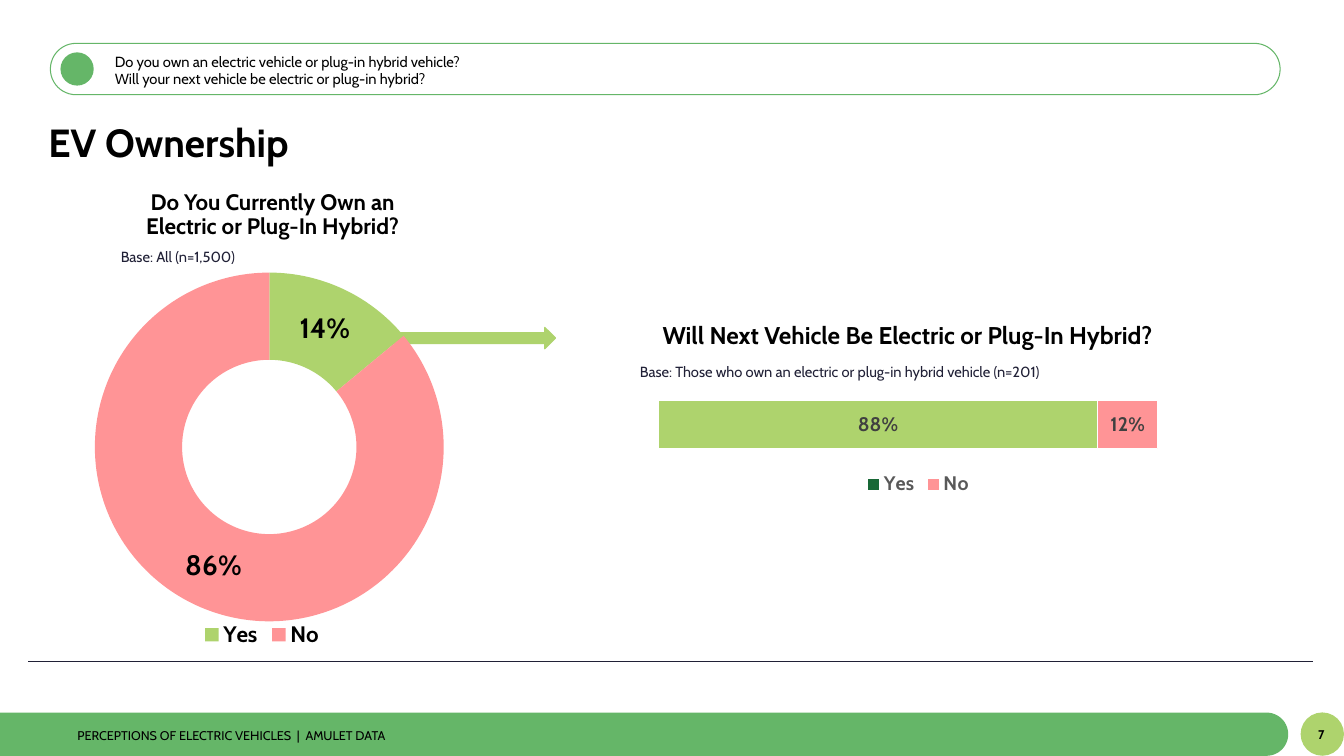
"""Build the EV ownership slide with a doughnut, a stacked bar and a footer band."""
from math import cos, pi, sin

from pptx import Presentation
from pptx.chart.data import CategoryChartData
from pptx.dml.color import RGBColor
from pptx.enum.chart import XL_CHART_TYPE as Chart, XL_LABEL_POSITION as LabelPos
from pptx.enum.chart import XL_LEGEND_POSITION as LegendPos
from pptx.enum.shapes import MSO_CONNECTOR as Connector, MSO_SHAPE as Shape
from pptx.enum.text import MSO_ANCHOR as Anchor, MSO_AUTO_SIZE as AutoSize, PP_ALIGN as Align
from pptx.oxml import parse_xml
from pptx.oxml.ns import nsdecls, qn
from pptx.oxml.xmlchemy import OxmlElement
from pptx.util import Inches, Pt

COLORS = {
    "band": "65B668", "yes": "AED36D", "no": "FF9496", "yes_key": "186836",
    "ink": "000000", "navy": "202036", "label": "404040", "key": "595959", "white": "FFFFFF",
}
FONT = "Cabin"
COLUMNS, ROWS = 80, 45


class SlideKit:
    """Draws styled elements on a grid of 80 columns by 45 rows."""

    def __init__(self, deck):
        self.slide = deck.slides.add_slide(deck.slide_layouts[1])
        self.shapes = self.slide.shapes
        self.cell = deck.slide_width / COLUMNS

    def span(self, *cells):
        return [round(self.cell * count) for count in cells]

    def color(self, name):
        return RGBColor.from_string(COLORS[name])

    def font(self, font, size, color="ink", bold=False):
        font.name, font.size, font.bold = FONT, Pt(size), bold
        font.color.rgb = self.color(color)

    def paint(self, part, fill=None, line=None, weight=1):
        if fill:
            part.fill.solid()
            part.fill.fore_color.rgb = self.color(fill)
        else:
            part.fill.background()
        if line:
            part.line.color.rgb = self.color(line)
            part.line.width = Pt(weight)
        else:
            part.line.fill.background()

    def shape(self, kind, box, **look):
        drawn = self.shapes.add_shape(kind, *self.span(*box))
        drawn.shadow.inherit = False
        self.paint(drawn, **look)
        return drawn

    def footer_band(self, top, right, color):
        radius = (ROWS - top) / 2
        steps = 32
        arc = [(right - radius + radius * sin(pi * i / steps),
                top + radius - radius * cos(pi * i / steps)) for i in range(steps + 1)]
        outline = self.shapes.build_freeform(*self.span(0, top))
        outline.add_line_segments([self.span(*point) for point in arc + [(0, ROWS)]])
        band = outline.convert_to_shape()
        band.shadow.inherit = False
        self.paint(band, color)

    def rule(self, left, right, row, color, weight):
        line = self.shapes.add_connector(Connector.STRAIGHT, *self.span(left, row, right, row))
        line.line.color.rgb = self.color(color)
        line.line.width = Pt(weight)
        line._element.spPr.append(OxmlElement("a:effectLst"))

    def text(self, box, lines, size, color="ink", bold=False, align=Align.LEFT,
             anchor=Anchor.TOP, spacing=0.9, holder=None):
        if holder is None:
            holder = self.shapes.add_textbox(*self.span(*box))
        else:
            holder.left, holder.top, holder.width, holder.height = self.span(*box)
        frame = holder.text_frame
        frame.word_wrap, frame.auto_size = True, AutoSize.NONE
        frame.vertical_anchor = anchor
        for index, words in enumerate(lines):
            paragraph = frame.add_paragraph() if index else frame.paragraphs[0]
            if holder.is_placeholder:
                properties = paragraph._p.get_or_add_pPr()
                properties.set("marL", "0")
                properties.set("indent", "0")
                properties.append(OxmlElement("a:buNone"))
            paragraph.alignment, paragraph.line_spacing = align, spacing
            paragraph.space_before = Pt(0)
            run = paragraph.add_run()
            run.text = words
            self.font(run.font, size, color, bold)

    def layout(self, x, y, w=None, h=None):
        sizes = f'<c:w val="{w}"/><c:h val="{h}"/>' if w else ""
        target = '<c:layoutTarget val="inner"/>' if w else ""
        return parse_xml(
            f'<c:layout {nsdecls("c")}><c:manualLayout>{target}<c:xMode val="edge"/>'
            f'<c:yMode val="edge"/><c:x val="{x}"/><c:y val="{y}"/>{sizes}'
            '</c:manualLayout></c:layout>')

    def chart(self, kind, box, categories, series, plot_at, legend_at, size, key_color):
        data = CategoryChartData(number_format="0%")
        data.categories = categories
        for name, values in series:
            data.add_series(name, values)
        chart = self.shapes.add_chart(kind, *self.span(*box), data).chart
        chart.has_title = False
        self.font(chart.font, size, bold=True)
        chart.has_legend = True
        chart.legend.position, chart.legend.include_in_layout = LegendPos.BOTTOM, False
        self.font(chart.legend.font, size, key_color, True)
        root = chart._chartSpace
        area, legend = root.chart.plotArea, chart.legend._element
        for parent in (area, legend):
            for old in parent.findall(qn("c:layout")):
                parent.remove(old)
        area.insert(0, self.layout(*plot_at))
        legend.find(qn("c:legendPos")).addnext(self.layout(*legend_at))
        root.chart.addnext(parse_xml(
            f'<c:spPr {nsdecls("c", "a")}><a:noFill/><a:ln><a:noFill/></a:ln></c:spPr>'))
        return chart

    def value_labels(self, labels, size, color):
        labels.show_value = True
        labels.number_format, labels.number_format_is_linked = "0%", False
        self.font(labels.font, size, color, True)

    def doughnut(self, box, categories, values, colors, **style):
        chart = self.chart(Chart.DOUGHNUT, box, categories, [("Series 1", values)], **style)
        plot = chart.plots[0]
        plot.vary_by_categories = True
        for index, color in enumerate(colors):
            self.paint(plot.series[0].points[index].format, color)
        plot.has_data_labels = True
        plot.data_labels.show_percentage = False
        self.value_labels(plot.data_labels, 20, "ink")

    def stacked_bar(self, box, series, colors, first_color, **style):
        chart = self.chart(Chart.BAR_STACKED, box, ["1"], series, **style)
        plot = chart.plots[0]
        plot.vary_by_categories, plot.gap_width, plot.overlap = False, 150, 100
        axis = chart.value_axis
        axis.minimum_scale, axis.maximum_scale = 0, 1
        axis.has_major_gridlines = False
        axis.visible = chart.category_axis.visible = False
        for answer, color in zip(plot.series, colors):
            self.paint(answer.format, color, "white", 0.75)
            self.value_labels(answer.data_labels, 14, "label")
            answer.data_labels.position = LabelPos.CENTER
        self.paint(plot.series[0].points[0].format, first_color, "white", 0.75)


def main():
    deck = Presentation()
    deck.slide_width, deck.slide_height = Inches(13.33), Inches(7.5)
    kit = SlideKit(deck)
    title, questions = kit.slide.placeholders

    kit.footer_band(42.43, 76.68, "band")
    kit.shape(Shape.OVAL, (77.42, 42.42, 2.58, 2.58), fill="yes")
    kit.text((77.37, 42.48, 2.58, 2.58), ["7"], 9, bold=True, align=Align.CENTER,
             anchor=Anchor.MIDDLE)
    kit.text((4.02, 43.14, 57.42, 1.26), ["PERCEPTIONS OF ELECTRIC VEHICLES  |  AMULET DATA"], 9)
    question_frame = kit.shape(Shape.ROUNDED_RECTANGLE, (3, 2.58, 73.2, 3.06),
                               line="band", weight=0.75)
    question_frame.adjustments[0] = 0.5
    kit.shape(Shape.OVAL, (3.6, 3.12, 1.98, 1.98), fill="band")
    kit.rule(1.68, 78.18, 39.36, "navy", 0.5)

    kit.text((6.24, 2.82, 69.24, 2.7),
             ["Do you own an electric vehicle or plug-in hybrid vehicle?",
              "Will your next vehicle be electric or plug-in hybrid?"],
             10.5, anchor=Anchor.MIDDLE, spacing=1.0, holder=questions)
    kit.text((2.28, 6.84, 73.2, 3.6), ["EV Ownership"], 28, bold=True,
             anchor=Anchor.MIDDLE, holder=title)

    kit.shape(Shape.RIGHT_ARROW, (18.18, 19.5, 14.88, 1.26), fill="yes", line="yes")
    kit.doughnut((3, 15.48, 25.8, 25.02), ["Yes", "No"], [0.14, 0.86], ["yes", "no"],
                 plot_at=(0.1, 0.03, 0.81, 0.83), legend_at=(0.34, 0.85),
                 size=16, key_color="ink")
    kit.text((6.6, 11.1, 19.26, 3.84), ["Do You Currently Own an Electric or Plug-In Hybrid?"],
             16, bold=True, align=Align.CENTER)
    kit.text((6.6, 14.58, 18.66, 1.62), ["Base: All (n=1,500)"], 10.5, "navy")

    kit.text((35.94, 18.78, 36.18, 3.3), ["Will Next Vehicle Be Electric or Plug-In Hybrid?"],
             17.3, bold=True, align=Align.CENTER, spacing=1.0)
    kit.text((37.5, 21.42, 32.1, 3),
             ["Base: Those who own an electric or plug-in hybrid vehicle (n=201)"], 10.5, "navy")
    kit.stacked_bar((38.58, 21.42, 30.96, 10.08), [("Yes", [0.88]), ("No", [0.12])],
                    ["yes_key", "no"], "yes", plot_at=(0.02, 0.03, 0.96, 0.71),
                    legend_at=(0.41, 0.64), size=14, key_color="key")
    deck.save("out.pptx")


if __name__ == "__main__":
    main()
